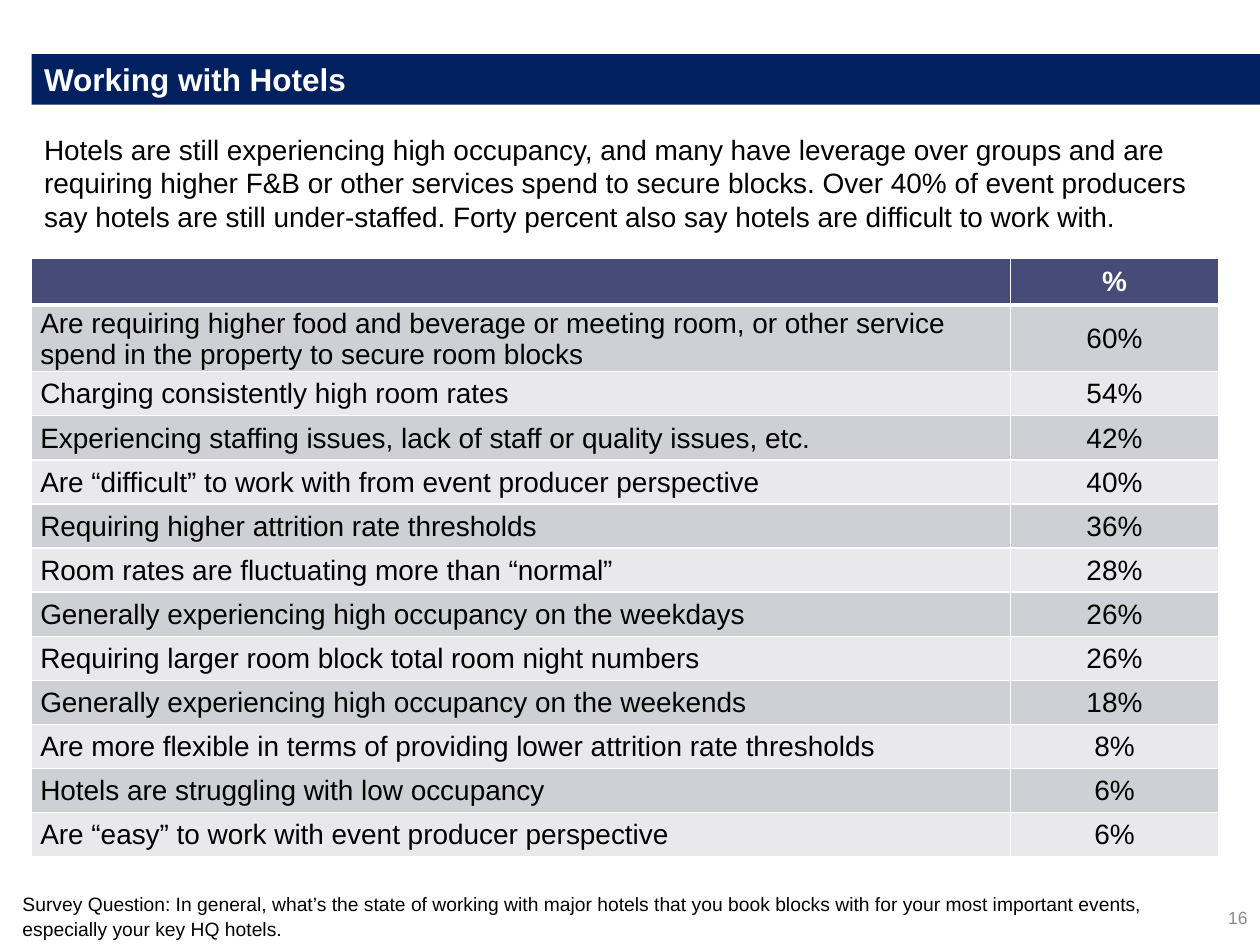
from lxml.etree import SubElement
from pptx import Presentation
from pptx.dml.color import RGBColor
from pptx.enum.text import MSO_ANCHOR as Anchor, MSO_AUTO_SIZE as AutoSize, PP_ALIGN as Align
from pptx.oxml.ns import qn
from pptx.util import Inches, Pt

NAVY = RGBColor(0x00, 0x20, 0x60)
SLATE = RGBColor(0x47, 0x4B, 0x78)
BAND_DARK = RGBColor(0xCF, 0xD0, 0xD6)
BAND_LIGHT = RGBColor(0xE9, 0xE9, 0xEC)
GREY = RGBColor(0x8C, 0x8C, 0x8C)
BLACK = RGBColor(0, 0, 0)
WHITE = RGBColor(0xFF, 0xFF, 0xFF)

FONT = "Arial"
LEFT, CONTENT_WIDTH = 0.25, 9.42
PERCENT_WIDTH = 1.65
HEADER_HEIGHT, TALL_ROW, ROW = 0.37, 0.53, 0.35

INTRO = (
    "Hotels are still experiencing high occupancy, and many have leverage over groups "
    "and are requiring higher F&B or other services spend to secure blocks. Over 40% of "
    "event producers say hotels are still under-staffed. Forty percent also say hotels "
    "are difficult to work with."
)
QUESTION = (
    "Survey Question: In general, what’s the state of working with major hotels that you "
    "book blocks with for your most important events, especially your key HQ hotels."
)
ANSWERS = [
    ("Are requiring higher food and beverage or meeting room, or other service\n"
     "spend in the property to secure room blocks", 60),
    ("Charging consistently high room rates", 54),
    ("Experiencing staffing issues, lack of staff or quality issues, etc.", 42),
    ("Are “difficult” to work with from event producer perspective", 40),
    ("Requiring higher attrition rate thresholds", 36),
    ("Room rates are fluctuating more than “normal”", 28),
    ("Generally experiencing high occupancy on the weekdays", 26),
    ("Requiring larger room block total room night numbers", 26),
    ("Generally experiencing high occupancy on the weekends", 18),
    ("Are more flexible in terms of providing lower attrition rate thresholds", 8),
    ("Hotels are struggling with low occupancy", 6),
    ("Are “easy” to work with event producer perspective", 6),
]


def place(shape, box):
    shape.left, shape.top, shape.width, shape.height = (Inches(n) for n in box)


def write(frame, text, size, color=BLACK, bold=False, align=Align.LEFT):
    frame.text = text
    frame.word_wrap = True
    for paragraph in frame.paragraphs:
        paragraph.alignment = align
        paragraph.space_before = Pt(0)
        font = paragraph.font
        font.name, font.size, font.bold = FONT, Pt(size), bold
        font.color.rgb = color


def add_heading(slide, box):
    heading = slide.shapes.title
    place(heading, box)
    heading.fill.solid()
    heading.fill.fore_color.rgb = NAVY
    frame = heading.text_frame
    write(frame, "Working with Hotels", 18, WHITE, bold=True)
    frame.vertical_anchor = Anchor.MIDDLE
    frame.auto_size = AutoSize.NONE


def add_intro(slide, box):
    intro = slide.placeholders[1]
    place(intro, box)
    write(intro.text_frame, INTRO, 16)
    intro.text_frame.auto_size = AutoSize.NONE
    # Plain paragraph: no bullet and no hanging indent
    properties = intro.text_frame.paragraphs[0]._p.get_or_add_pPr()
    properties.set("marL", "0")
    properties.set("indent", "0")
    properties.insert_element_before(
        properties.makeelement(qn("a:buNone"), {}), "a:tabLst", "a:defRPr", "a:extLst")


def add_borders(cell, top, bottom):
    properties = cell._tc.get_or_add_tcPr()
    for side, width in (("L", 1), ("R", 1), ("T", top), ("B", bottom)):
        line = SubElement(properties, qn(f"a:ln{side}"), w=str(Pt(width)))
        SubElement(SubElement(line, qn("a:solidFill")), qn("a:srgbClr"), val=str(WHITE))


def fill_cell(cell, text, fill, row, **style):
    write(cell.text_frame, text, 16, **style)
    cell.vertical_anchor = Anchor.MIDDLE
    cell.margin_left = Inches(0.07 if style.get("align") is None else 0.01)
    cell.margin_right = cell.margin_top = Inches(0.01)
    cell.margin_bottom = 0
    add_borders(cell, top=3 if row == 1 else 1, bottom=3 if row == 0 else 1)
    cell.fill.solid()
    cell.fill.fore_color.rgb = fill


def add_answers(slide, box):
    frame = slide.shapes.add_table(len(ANSWERS) + 1, 2, *(Inches(n) for n in box))
    table = frame.table
    table.columns[0].width = Inches(box[2] - PERCENT_WIDTH)
    table.columns[1].width = Inches(PERCENT_WIDTH)

    # Header row
    table.rows[0].height = Inches(HEADER_HEIGHT)
    fill_cell(table.cell(0, 0), "", SLATE, 0)
    fill_cell(table.cell(0, 1), "%", SLATE, 0, color=WHITE, bold=True, align=Align.CENTER)

    # Banded answer rows
    for row, (answer, percent) in enumerate(ANSWERS, start=1):
        table.rows[row].height = Inches(TALL_ROW if "\n" in answer else ROW)
        band = BAND_DARK if row % 2 else BAND_LIGHT
        fill_cell(table.cell(row, 0), answer, band, row)
        fill_cell(table.cell(row, 1), f"{percent}%", band, row, align=Align.CENTER)


def add_footer(slide, question_box, number_box):
    question = slide.shapes.add_textbox(*(Inches(n) for n in question_box)).text_frame
    write(question, QUESTION, 11)
    question.paragraphs[0].line_spacing = 1.07
    number = slide.shapes.add_textbox(*(Inches(n) for n in number_box)).text_frame
    write(number, "16", 10, GREY, align=Align.RIGHT)
    number.vertical_anchor = Anchor.MIDDLE


def main():
    deck = Presentation()
    deck.slide_width, deck.slide_height = Inches(10), Inches(7.5)
    slide = deck.slides.add_slide(deck.slide_layouts[1])
    add_heading(slide, (LEFT, 0.43, 10 - LEFT, 0.4))
    add_intro(slide, (LEFT, 1, CONTENT_WIDTH, 0.91))
    table_height = HEADER_HEIGHT + TALL_ROW + ROW * (len(ANSWERS) - 1)
    add_answers(slide, (LEFT, 2.05, CONTENT_WIDTH, table_height))
    add_footer(slide, (0.08, 7.02, 9.58, 0.48), (7.67, 7.08, 2.33, 0.4))
    deck.save("out.pptx")


if __name__ == "__main__":
    main()
